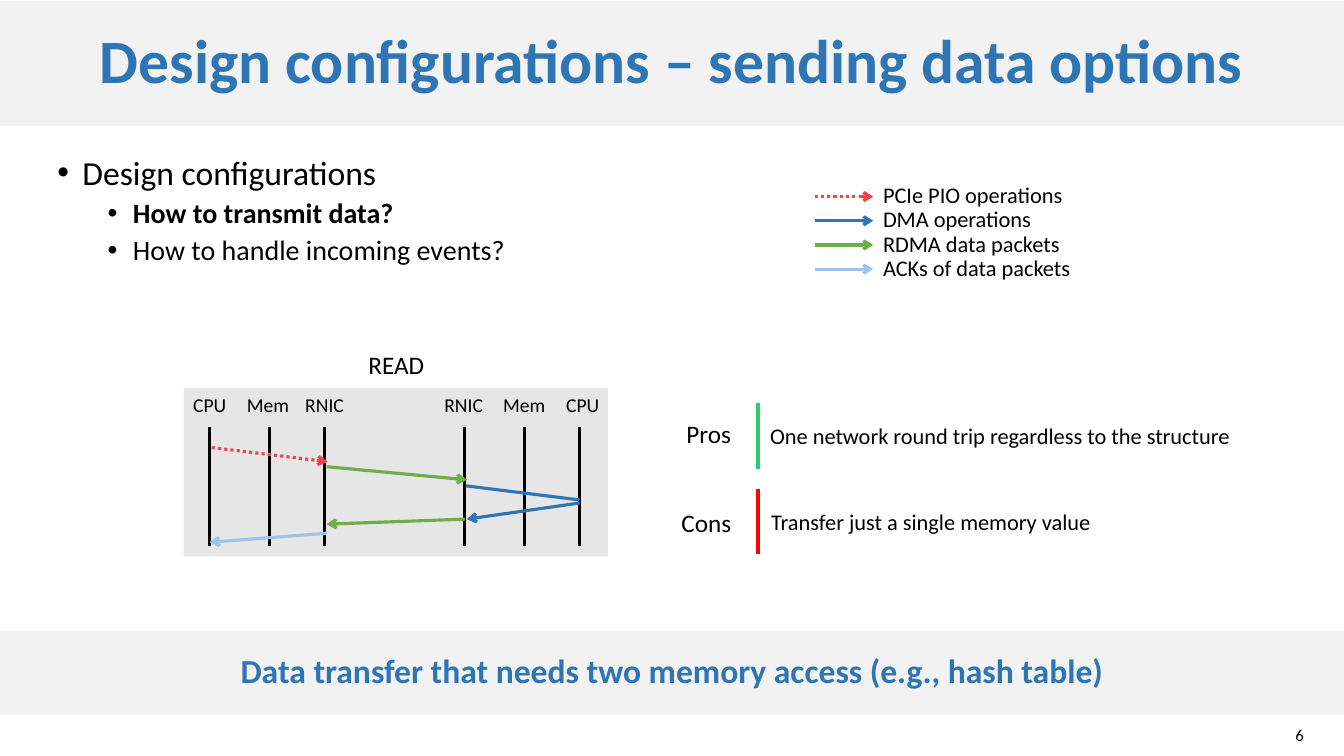
from dataclasses import dataclass
from typing import Optional

from lxml import etree
from pptx import Presentation
from pptx.dml.color import RGBColor
from pptx.enum.dml import MSO_LINE
from pptx.enum.shapes import MSO_CONNECTOR, MSO_SHAPE
from pptx.enum.text import MSO_ANCHOR, MSO_AUTO_SIZE, PP_ALIGN
from pptx.oxml.ns import qn
from pptx.util import Inches, Pt

STRAIGHT = MSO_CONNECTOR.STRAIGHT
RECTANGLE = MSO_SHAPE.RECTANGLE
DOTTED = MSO_LINE.ROUND_DOT
LEFT, CENTER, RIGHT = PP_ALIGN.LEFT, PP_ALIGN.CENTER, PP_ALIGN.RIGHT
TOP, MIDDLE = MSO_ANCHOR.TOP, MSO_ANCHOR.MIDDLE
FIXED = MSO_AUTO_SIZE.NONE

FONT = "Calibri"
SLIDE_WIDTH = 13.33
COLORS = {
    "text": "000000",
    "band": "F2F2F2",
    "panel": "E7E6E6",
    "heading": "2E75B6",
    "pio": "EE454D",
    "dma": "2E75B6",
    "data": "70AD47",
    "ack": "9DC3E6",
    "pros": "2ECC70",
    "cons": "FF0000",
}


@dataclass
class Bullet:
    text: str
    level: int
    size: int
    space_before: int
    bold: bool = False


@dataclass
class Legend:
    text: str
    color: str


@dataclass
class Lifeline:
    name: str
    line_x: float
    label_x: float


@dataclass
class Message:
    color: str
    start: tuple[float, float]
    end: tuple[float, float]
    arrow: bool = True


@dataclass
class Verdict:
    name: str
    color: str
    bar_top: float
    name_box: tuple[float, float, float, float]
    text: str
    text_box: tuple[float, float, float, float]


BULLETS = [
    Bullet("Design configurations", 0, 24, 12),
    Bullet("How to transmit data?", 1, 20, 5, True),
    Bullet("How to handle incoming events?", 1, 20, 5),
]
LEGENDS = [
    Legend("PCIe PIO operations", "pio"),
    Legend("DMA operations", "dma"),
    Legend("RDMA data packets", "data"),
    Legend("ACKs of data packets", "ack"),
]
LIFELINES = [
    Lifeline("CPU", 2.08, 2.08),
    Lifeline("Mem", 2.67, 2.66),
    Lifeline("RNIC", 3.22, 3.22),
    Lifeline("RNIC", 4.61, 4.6),
    Lifeline("Mem", 5.2, 5.2),
    Lifeline("CPU", 5.75, 5.78),
]
MESSAGES = [
    Message("data", (3.24, 4.63), (4.63, 4.76)),
    Message("dma", (4.62, 4.82), (5.75, 4.96), False),
    Message("dma", (5.75, 4.99), (4.63, 5.15)),
    Message("data", (4.61, 5.15), (3.24, 5.2)),
    Message("ack", (3.24, 5.29), (2.08, 5.38)),
    Message("pio", (2.1, 4.44), (3.25, 4.58)),
]
VERDICTS = [
    Verdict("Pros", "pros", 4, (6.71, 4.1, 0.65, 0.4),
            "One network round trip regardless to the structure", (7.54, 4.14, 4.85, 0.37)),
    Verdict("Cons", "cons", 4.85, (6.66, 4.98, 0.7, 0.4),
            "Transfer just a single memory value", (7.55, 4.99, 3.41, 0.37)),
]


def rgb(name: str) -> RGBColor:
    return RGBColor.from_string(COLORS[name])


def write(paragraph, text: str, *, size: int, color: str = "text", bold: bool = False,
          align=LEFT, spacing: Optional[float] = None, before: int = 0) -> None:
    paragraph.alignment = align
    paragraph.space_before = Pt(before)
    if spacing:
        paragraph.line_spacing = spacing
    run = paragraph.add_run()
    run.text = text
    run.font.name = FONT
    run.font.size = Pt(size)
    run.font.bold = bold
    run.font.color.rgb = rgb(color)


def add_label(slide, text: str, box: tuple, *, wrap: bool = True, anchor=TOP, **style) -> None:
    frame = slide.shapes.add_textbox(*map(Inches, box)).text_frame
    frame.word_wrap = wrap
    frame.vertical_anchor = anchor
    write(frame.paragraphs[0], text, **style)


def add_line(slide, start: tuple, end: tuple, color: str, *, width: float = 2.25,
             arrow: bool = False) -> None:
    connector = slide.shapes.add_connector(STRAIGHT, *map(Inches, (*start, *end)))
    connector.line.color.rgb = rgb(color)
    connector.line.width = Pt(width)
    if color == "pio":
        connector.line.dash_style = DOTTED
    if arrow:
        etree.SubElement(connector.line._get_or_add_ln(), qn("a:tailEnd"), type="arrow")
    etree.SubElement(connector._element.spPr, qn("a:effectLst"))


def add_rectangle(slide, box: tuple, color: str):
    shape = slide.shapes.add_shape(RECTANGLE, *map(Inches, box))
    shape.shadow.inherit = False
    shape.fill.solid()
    shape.fill.fore_color.rgb = rgb(color)
    shape.line.fill.background()
    return shape


def add_title(slide) -> None:
    title = slide.shapes.title
    title.left, title.top, title.width, title.height = map(Inches, (0, 0.01, SLIDE_WIDTH, 1.24))
    title.fill.solid()
    title.fill.fore_color.rgb = rgb("band")
    title.text_frame.auto_size = FIXED
    title.text_frame.vertical_anchor = MIDDLE
    write(title.text_frame.paragraphs[0], "Design configurations – sending data options",
          size=44, color="heading", bold=True, align=CENTER, spacing=0.9)


def add_bullets(slide) -> None:
    frame = slide.shapes.add_textbox(*map(Inches, (0.47, 1.5, 12.36, 4.83))).text_frame
    frame.word_wrap = True
    for index, bullet in enumerate(BULLETS):
        paragraph = frame.add_paragraph() if index else frame.paragraphs[0]
        write(paragraph, bullet.text, size=bullet.size, bold=bullet.bold,
              spacing=0.9, before=bullet.space_before)
        paragraph.level = bullet.level
        properties = paragraph._p.get_or_add_pPr()
        properties.set("marL", str(Inches(0.25 + 0.5 * bullet.level)))
        properties.set("indent", str(Inches(-0.25)))
        etree.SubElement(properties, qn("a:buFont"), typeface="Arial")
        etree.SubElement(properties, qn("a:buChar"), char="•")


def add_legend(slide) -> None:
    for index, legend in enumerate(LEGENDS):
        y = 1.95 + 0.24 * index
        add_line(slide, (8.08, y), (8.66, y), legend.color, arrow=True)
        add_label(slide, legend.text, (8.66, y - 0.2, 2.5, 0.37), size=16)


def add_sequence(slide) -> None:
    add_label(slide, "READ", (3.17, 3.42, 1.52, 0.4), size=18, align=CENTER)
    add_rectangle(slide, (1.82, 3.85, 4.21, 1.67), "panel")
    for lifeline in LIFELINES:
        add_line(slide, (lifeline.line_x, 4.24), (lifeline.line_x, 5.42), "text")
        add_label(slide, lifeline.name, (lifeline.label_x - 0.35, 3.85, 0.7, 0.34),
                  size=14, align=CENTER)
    for message in MESSAGES:
        add_line(slide, message.start, message.end, message.color, arrow=message.arrow)


def add_verdicts(slide) -> None:
    for verdict in VERDICTS:
        add_line(slide, (7.52, verdict.bar_top), (7.52, verdict.bar_top + 0.65),
                 verdict.color, width=3)
        add_label(slide, verdict.name, verdict.name_box, wrap=False, size=18)
        add_label(slide, verdict.text, verdict.text_box, wrap=False, size=16)


def main() -> None:
    presentation = Presentation()
    presentation.slide_width = Inches(SLIDE_WIDTH)
    presentation.slide_height = Inches(7.5)
    slide = presentation.slides.add_slide(presentation.slide_layouts[5])
    add_title(slide)
    add_bullets(slide)
    add_legend(slide)
    add_verdicts(slide)
    add_sequence(slide)
    banner = add_rectangle(slide, (0, 6.26, SLIDE_WIDTH, 0.83), "band")
    banner.text_frame.vertical_anchor = MIDDLE
    write(banner.text_frame.paragraphs[0],
          "Data transfer that needs two memory access (e.g., hash table)",
          size=24, color="heading", bold=True, align=CENTER, spacing=0.9)
    add_label(slide, "6", (11.96, 7.14, 1.07, 0.3), anchor=MIDDLE, size=12, align=RIGHT)
    presentation.save("out.pptx")


if __name__ == "__main__":
    main()
